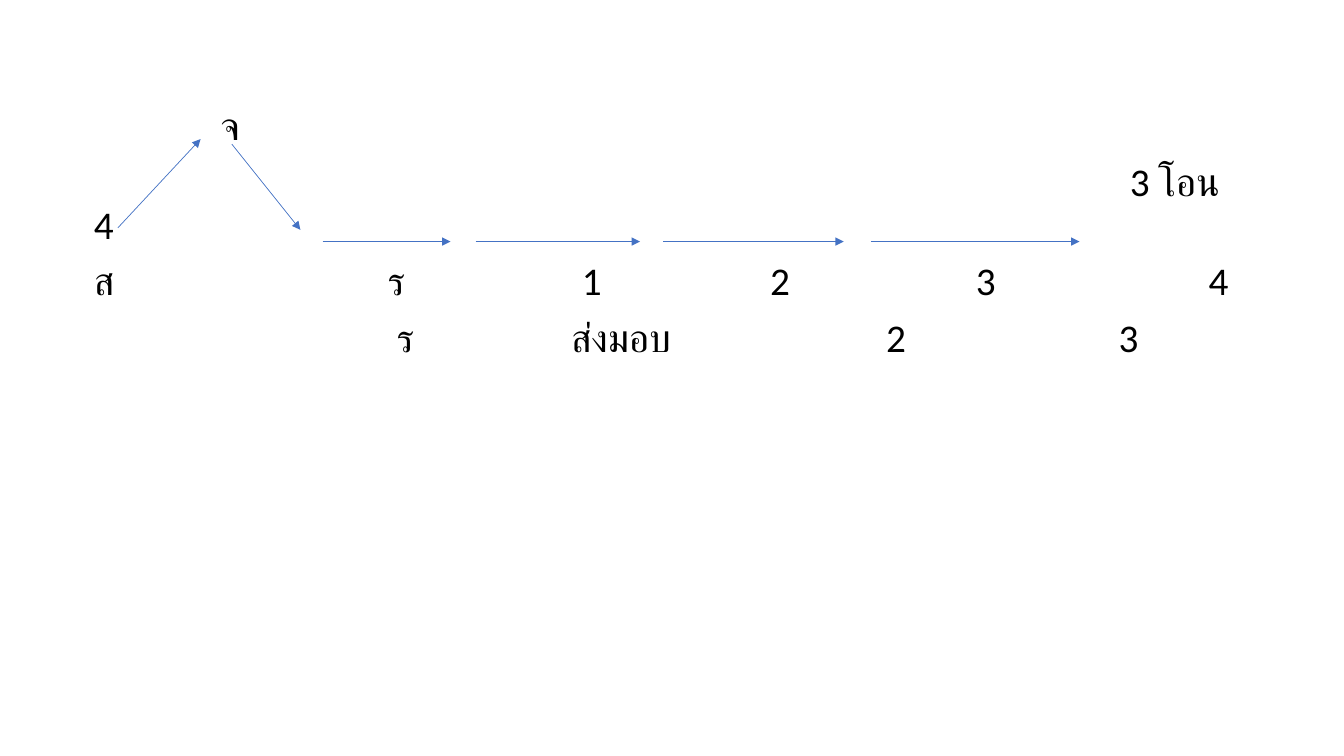
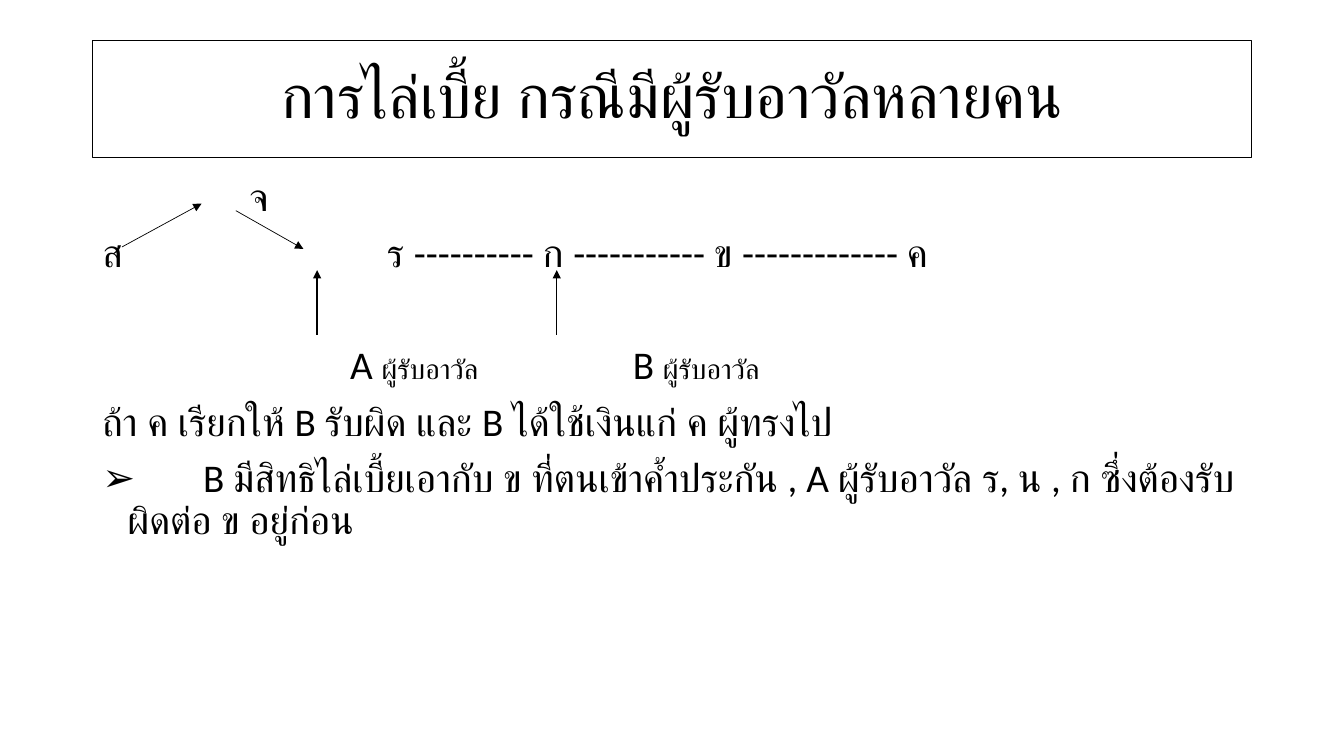
from dataclasses import dataclass
from typing import Optional

from lxml import etree
from pptx import Presentation
from pptx.dml.color import RGBColor
from pptx.enum.shapes import MSO_CONNECTOR, MSO_SHAPE
from pptx.enum.text import MSO_ANCHOR, PP_ALIGN
from pptx.oxml.ns import qn
from pptx.util import Emu, Inches, Pt

STRAIGHT = MSO_CONNECTOR.STRAIGHT
RECTANGLE = MSO_SHAPE.RECTANGLE
TOP, MIDDLE = MSO_ANCHOR.TOP, MSO_ANCHOR.MIDDLE
LEFT, CENTER = PP_ALIGN.LEFT, PP_ALIGN.CENTER
COLUMNS, ROWS = 40, 22.5
CELL = Inches(1) / 3


@dataclass(frozen=True)
class Theme:
    """Colours, fonts and type sizes shared by the slides."""
    font: str = "Calibri"
    bullet_font: str = "Arial"
    ink: RGBColor = RGBColor(0x00, 0x00, 0x00)
    accent: RGBColor = RGBColor(0x44, 0x72, 0xC4)
    title_size: float = 44
    body_size: float = 28
    small_size: float = 20
    line_spacing: float = 0.9
    space_before: float = 10
    thin: float = 0.5
    border: float = 0.75
    bold_line: float = 1


THEME = Theme()


@dataclass(frozen=True)
class Box:
    """A rectangle in grid cells."""
    column: float
    row: float
    columns: float
    rows: float


@dataclass(frozen=True)
class Run:
    """A piece of text in one size, with an optional line break before it."""
    text: str
    size: float = THEME.body_size
    breaks: bool = False


@dataclass(frozen=True)
class Line:
    """A paragraph with tab stops in grid cells from the text edge."""
    runs: tuple[Run, ...]
    stops: tuple[float, ...] = ()
    space_before: float = THEME.space_before
    bullet: str = ""


@dataclass(frozen=True)
class Arrow:
    """An arrow between two grid points."""
    start: tuple[float, float]
    end: tuple[float, float]
    color: RGBColor = THEME.ink
    width: float = THEME.thin


def cells(count: float) -> Emu:
    """Convert grid cells to a length."""
    return Emu(round(count * CELL))


def format_indents(paragraph, line: Line) -> None:
    """Set the bullet and the tab stops of a paragraph."""
    properties = paragraph._p.get_or_add_pPr()
    if line.bullet:
        properties.set("marL", str(Inches(0.25)))
        properties.set("indent", str(-Inches(0.25)))
        etree.SubElement(properties, qn("a:buFont"), typeface=THEME.bullet_font)
        etree.SubElement(properties, qn("a:buChar"), char=line.bullet)
    if line.stops:
        tabs = etree.SubElement(properties, qn("a:tabLst"))
        for stop in line.stops:
            etree.SubElement(tabs, qn("a:tab"), pos=str(cells(stop)), algn="l")


def add_text(slide, box: Box, lines: tuple[Line, ...], *, align=LEFT, anchor=TOP,
             border: Optional[RGBColor] = None) -> None:
    """Add a text block, framed when a border colour is given."""
    place = [cells(length) for length in (box.column, box.row, box.columns, box.rows)]
    if border is None:
        shape = slide.shapes.add_textbox(*place)
    else:
        shape = slide.shapes.add_shape(RECTANGLE, *place)
        shape.shadow.inherit = False
        shape.fill.background()
        shape.line.color.rgb = border
        shape.line.width = Pt(THEME.border)
    frame = shape.text_frame
    frame.word_wrap = True
    frame.vertical_anchor = anchor
    for index, line in enumerate(lines):
        paragraph = frame.add_paragraph() if index else frame.paragraphs[0]
        paragraph.alignment = align
        paragraph.line_spacing = THEME.line_spacing
        paragraph.space_before = Pt(line.space_before)
        format_indents(paragraph, line)
        for piece in line.runs:
            if piece.breaks:
                paragraph.add_line_break()
            run = paragraph.add_run()
            run.text = piece.text
            run.font.name = THEME.font
            run.font.size = Pt(piece.size)
            run.font.color.rgb = THEME.ink


def add_title(slide, text: str) -> None:
    """Add the framed, centred title."""
    line = Line((Run(text, THEME.title_size),), space_before=0)
    add_text(slide, Box(2.75, 1.2, 34.5, 3.48), (line,),
             align=CENTER, anchor=MIDDLE, border=THEME.ink)


def add_arrow(slide, arrow: Arrow) -> None:
    """Add a connector with a triangular head at its end."""
    points = [cells(value) for value in (*arrow.start, *arrow.end)]
    connector = slide.shapes.add_connector(STRAIGHT, *points)
    connector.line.color.rgb = arrow.color
    connector.line.width = Pt(arrow.width)
    outline = connector.line._get_or_add_ln()
    etree.SubElement(outline, qn("a:tailEnd"), type="triangle")
    etree.SubElement(connector._element.spPr, qn("a:effectLst"))


def build_transfer_slide(slide) -> None:
    """Draw the chain of transfers."""
    add_text(slide, Box(2.5, 3.03, 34.5, 14.28), (
        Line((Run("\tจ"),), (3.77,)),
        Line((Run("\t3 โอน"), Run("4", breaks=True)), (30.83,)),
        Line((Run("ส\tร\t1\t2\t3\t4"),), (8.75, 14.52, 20.13, 26.25, 33.18)),
        Line((Run("\tร\tส่งมอบ\t2\t3"),), (9.02, 14.2, 23.58, 30.5)),
    ))
    slopes = (((3.51, 6.78), (5.97, 4.14)), ((6.9, 4.29), (8.94, 6.84)))
    spans = ((9.6, 13.41), (14.16, 19.05), (19.74, 25.11), (25.92, 32.13))
    chain = tuple(((start, 7.19), (end, 7.19)) for start, end in spans)
    for start, end in slopes + chain:
        add_arrow(slide, Arrow(start, end, THEME.accent))


def build_recourse_slide(slide) -> None:
    """Draw the recourse case with several guarantors."""
    add_title(slide, "การไล่เบี้ย กรณีมีผู้รับอาวัลหลายคน")
    guarantor = "ผู้รับอาวัล"
    add_text(slide, Box(2.75, 5.13, 34.5, 15.15), (
        Line((Run("\tจ"),), (4.38,)),
        Line((Run("ส\tร ---------- ก ----------- ข ------------- ค"),), (8.47,)),
        Line((Run("\tA "), Run(guarantor, THEME.small_size),
              Run("\tB "), Run(guarantor, THEME.small_size)),
             (7.38, 15.79), space_before=50),
        Line((Run("ถ้า ค เรียกให้ B รับผิด และ B ได้ใช้เงินแก่ ค ผู้ทรงไป"),)),
        Line((Run("\tB มีสิทธิไล่เบี้ยเอากับ ข ที่ตนเข้าค้ำประกัน , A ผู้รับอาวัล ร, น , ก "
                  "ซึ่งต้องรับผิดต่อ ข อยู่ก่อน"),), (3,), bullet="➢"),
    ))
    for column in (9.44, 16.57):
        add_arrow(slide, Arrow((column, 9.96), (column, 8.04), width=THEME.bold_line))
    for start, end in (((3.63, 7.35), (6, 6.06)), ((7.02, 6.27), (9.03, 7.41))):
        add_arrow(slide, Arrow(start, end))


def main() -> None:
    """Build and save the presentation."""
    presentation = Presentation()
    presentation.slide_width = cells(COLUMNS)
    presentation.slide_height = cells(ROWS)
    blank = presentation.slide_layouts[6]
    for build in (build_transfer_slide, build_recourse_slide):
        build(presentation.slides.add_slide(blank))
    presentation.save("out.pptx")


if __name__ == "__main__":
    main()
